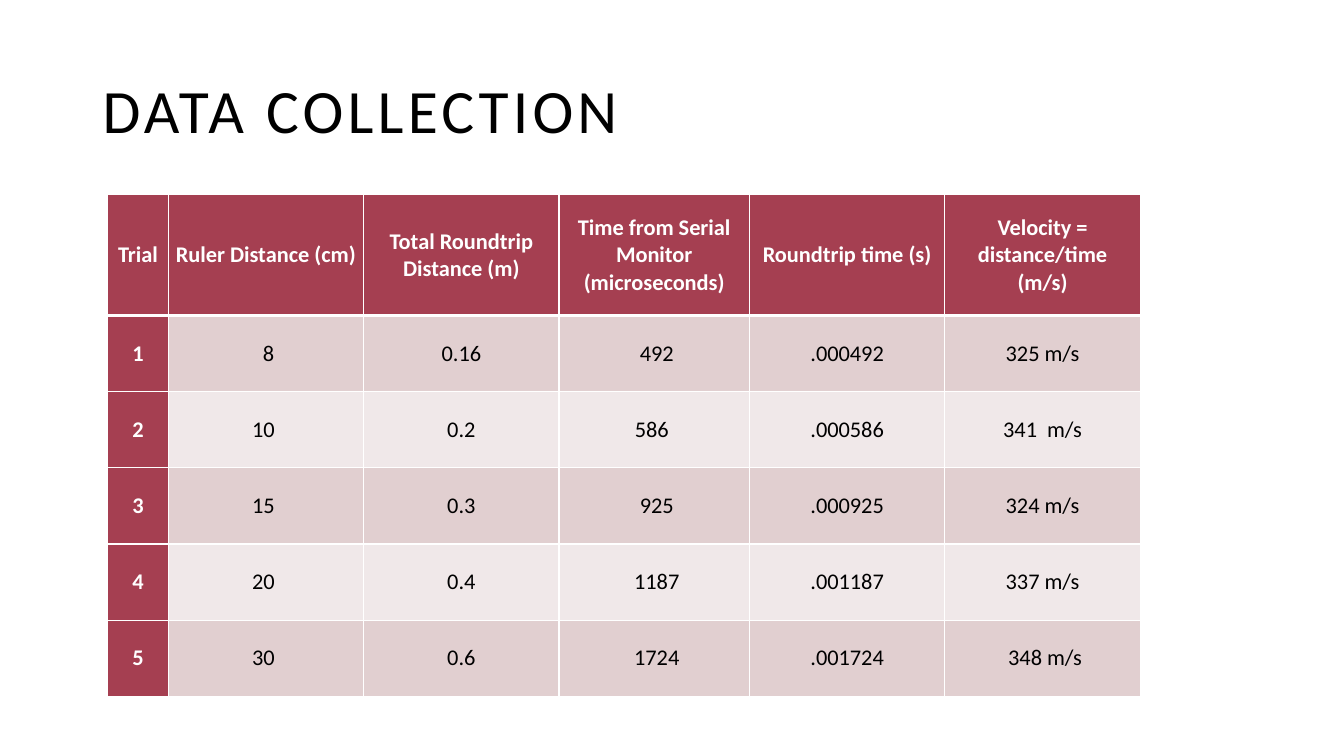
from dataclasses import dataclass

from lxml import etree
from pptx import Presentation
from pptx.dml.color import RGBColor
from pptx.enum.text import MSO_ANCHOR, PP_ALIGN
from pptx.oxml.ns import qn
from pptx.util import Pt

MIDDLE = MSO_ANCHOR.MIDDLE
LEFT = PP_ALIGN.LEFT
CENTER = PP_ALIGN.CENTER
TITLE_ONLY = 5


@dataclass(frozen=True)
class Theme:
    font: str = "Calibri"
    ink: str = "000000"
    paper: str = "FFFFFF"
    accent: str = "A53F51"
    bands: tuple = ("E1CFD0", "F0E8E9")
    title_size: float = 44
    cell_size: float = 16
    thin: float = 1
    thick: float = 3


HEADERS = ["Trial", "Ruler Distance (cm)", "Total Roundtrip Distance (m)",
           "Time from Serial Monitor (microseconds)", "Roundtrip time (s)",
           "Velocity = distance/time (m/s)"]
TRIALS = [
    ["1", " 8", "0.16", " 492", ".000492", "325 m/s"],
    ["2", "10 ", "0.2", "586 ", ".000586", "341  m/s"],
    ["3", "15 ", "0.3", " 925", ".000925", "324 m/s"],
    ["4", "20 ", "0.4", " 1187", ".001187", "337 m/s"],
    ["5", "30 ", "0.6", " 1724", ".001724", " 348 m/s"],
]
COLUMN_WIDTHS = [43.2, 139.6, 139.6, 136, 139.6, 139.6]
HEADER_HEIGHT, TRIAL_HEIGHT = 86.4, 54.4


def write_text(tf, text, *, font, size, color, bold=False, align=LEFT,
               line_spacing=1.0, tracking=0):
    p = tf.paragraphs[0]
    p.alignment = align
    p.line_spacing = line_spacing
    r = p.add_run()
    r.text = text
    r.font.name = font
    r.font.size = Pt(size)
    r.font.bold = bold
    r.font.color.rgb = RGBColor.from_string(color)
    if tracking:
        r.font._element.set("spc", str(tracking * 100))


class Deck:
    def __init__(self, prs, theme):
        self.theme = theme
        self.s = prs.slides.add_slide(prs.slide_layouts[TITLE_ONLY])

    def title(self, text, x, y, w, h):
        sp = self.s.shapes.title
        sp.left, sp.top, sp.width, sp.height = Pt(x), Pt(y), Pt(w), Pt(h)
        tf = sp.text_frame
        tf.word_wrap = True
        tf.vertical_anchor = MIDDLE
        write_text(tf, text, font=self.theme.font, size=self.theme.title_size,
                   color=self.theme.ink, line_spacing=0.9, tracking=3)

    def border(self, cell, side, width):
        ln = etree.SubElement(cell._tc.get_or_add_tcPr(), qn(f"a:ln{side}"),
                              w=str(Pt(width)))
        fill = etree.SubElement(ln, qn("a:solidFill"))
        etree.SubElement(fill, qn("a:srgbClr"), val=self.theme.paper)

    def cell(self, cell, text, row, col):
        t = self.theme
        heading = row == 0 or col == 0
        cell.vertical_anchor = MIDDLE
        cell.margin_left = cell.margin_right = Pt(4.9)
        cell.margin_top = cell.margin_bottom = 0
        top = t.thick if row == 1 else t.thin
        bottom = t.thick if row == 0 else t.thin
        for side, width in zip("LRTB", (t.thin, t.thin, top, bottom)):
            self.border(cell, side, width)
        cell.fill.solid()
        color = t.accent if heading else t.bands[(row - 1) % 2]
        cell.fill.fore_color.rgb = RGBColor.from_string(color)
        write_text(cell.text_frame, text, font=t.font, size=t.cell_size,
                   color=t.paper if heading else t.ink, bold=heading, align=CENTER)

    def table(self, rows, x, y, widths, heights):
        frame = self.s.shapes.add_table(len(rows), len(widths), Pt(x), Pt(y),
                                        Pt(sum(widths)), Pt(sum(heights)))
        table = frame.table
        table.first_col = True
        for column, width in zip(table.columns, widths):
            column.width = Pt(width)
        for i, (values, height) in enumerate(zip(rows, heights)):
            table.rows[i].height = Pt(height)
            for j, text in enumerate(values):
                self.cell(table.cell(i, j), text, i, j)


def main():
    prs = Presentation()
    prs.slide_width, prs.slide_height = Pt(960), Pt(540)
    deck = Deck(prs, Theme())
    deck.title("DATA COLLECTION", 66.2, 28.8, 828, 104.4)
    heights = [HEADER_HEIGHT] + [TRIAL_HEIGHT] * len(TRIALS)
    deck.table([HEADERS] + TRIALS, 77, 139, COLUMN_WIDTHS, heights)
    prs.save("out.pptx")


if __name__ == "__main__":
    main()
